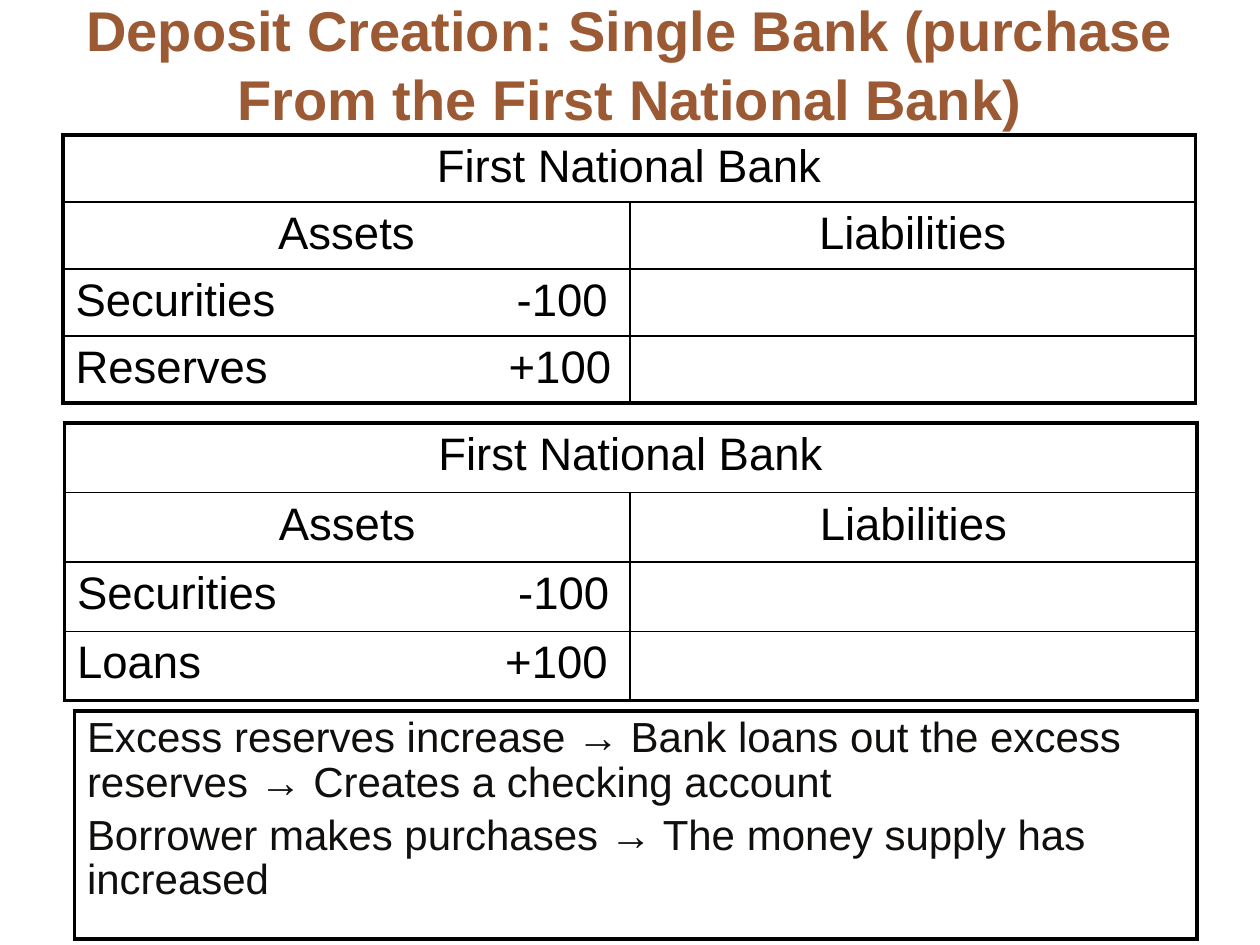
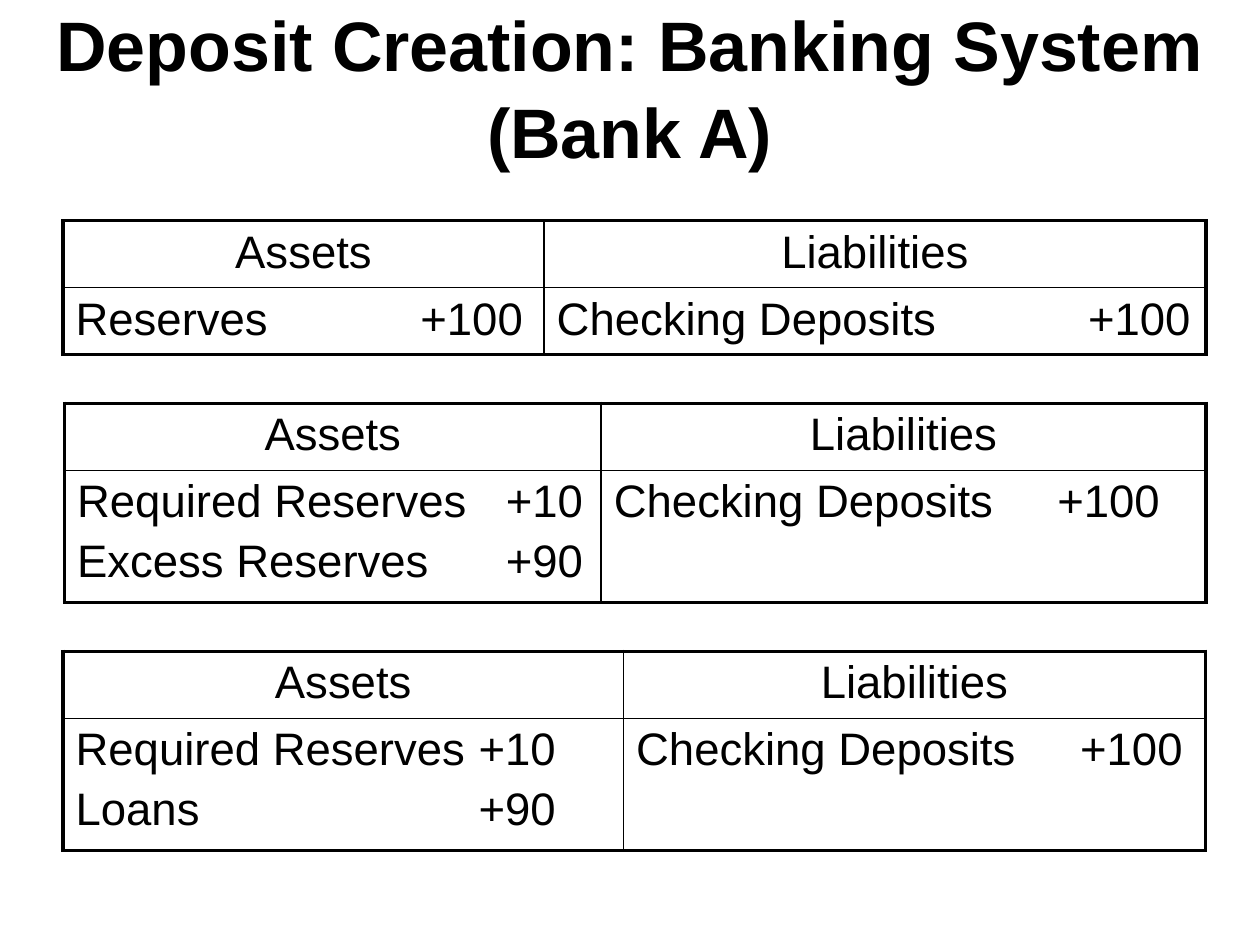
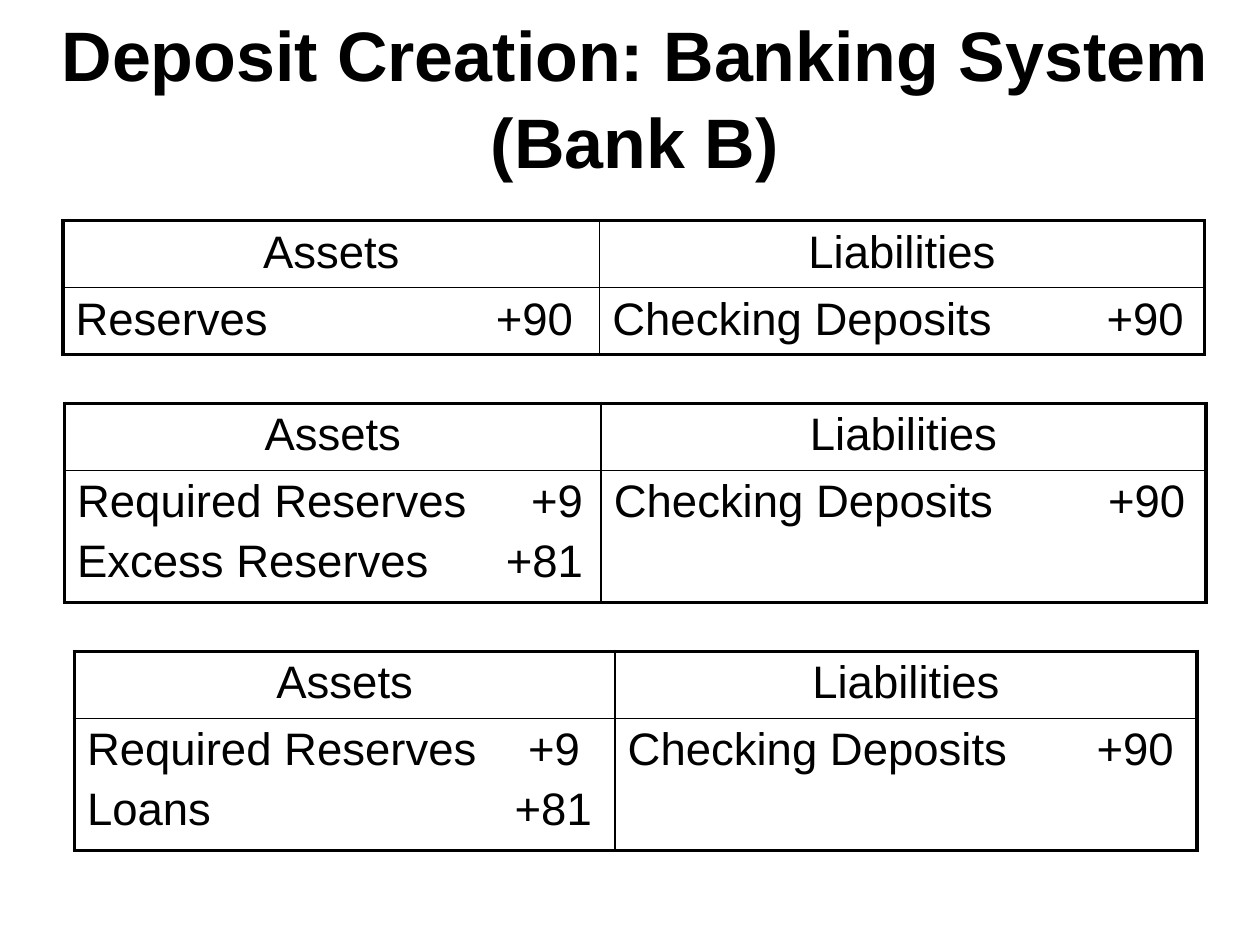
from dataclasses import dataclass

from lxml.etree import SubElement as Sub
from pptx import Presentation
from pptx.dml.color import RGBColor as Rgb
from pptx.enum.text import MSO_ANCHOR as Anchor, MSO_AUTO_SIZE as Fit, PP_ALIGN as Align
from pptx.oxml.ns import qn
from pptx.util import Cm, Pt


@dataclass(frozen=True)
class Theme:
    """Colours, type sizes and line widths of the deck."""
    face: str = "Arial"
    ink: str = "000000"
    note: str = "100F0D"
    rust: str = "9B5934"
    small: int = 32
    large: int = 40
    entry: int = 26
    body: int = 24
    thick: float = 2.25
    thin: float = 1


@dataclass(frozen=True)
class Box:
    """Left, top, column widths and row heights in centimetres."""
    x: float
    y: float
    cols: tuple
    rows: tuple


@dataclass(frozen=True)
class Entry:
    """A label, its amount and the tab stop that ends the amount."""
    label: str
    sum: str
    tab: float


THEME = Theme()
SHORT, TALL = (1.35, 1.35), (1.35, 2.67)
HEADS = ("Assets", "Liabilities")


def add_run(para, text, size, ink, bold=False):
    """Add one formatted run to a paragraph."""
    run = para.add_run()
    run.text = text
    font = run.font
    font.name, font.size, font.bold = THEME.face, Pt(size), bold
    font.color.rgb = Rgb.from_string(ink)


def next_para(frame, index, gap):
    """Return the paragraph at an index, spaced from the one before."""
    if index == 0:
        return frame.paragraphs[0]
    para = frame.add_paragraph()
    para.space_before = Pt(gap)
    return para


def set_tab(para, stop):
    """Give a paragraph one right-aligned tab stop."""
    tabs = Sub(para._p.get_or_add_pPr(), qn("a:tabLst"))
    Sub(tabs, qn("a:tab"), pos=str(Cm(stop)), algn="r")


def put_head(cell, text):
    """Write a centred heading in a cell."""
    para = cell.text_frame.paragraphs[0]
    para.alignment = Align.CENTER
    add_run(para, text, THEME.entry, THEME.ink)


def put_items(cell, items):
    """Write ledger entries in a cell, one to a paragraph."""
    for i, item in enumerate(items):
        para = next_para(cell.text_frame, i, 5.2)
        set_tab(para, item.tab)
        add_run(para, item.label, THEME.entry, THEME.ink)
        add_run(para, "\t" + item.sum, THEME.entry, THEME.ink)


def rule_cell(cell, outer):
    """Draw the four borders of a cell, thick where it meets the frame."""
    props = cell._tc.get_or_add_tcPr()
    for side, edge in zip("LRTB", outer):
        width = Pt(THEME.thick if edge else THEME.thin)
        line = Sub(props, qn(f"a:ln{side}"), w=str(width))
        fill = Sub(line, qn("a:solidFill"))
        Sub(fill, qn("a:srgbClr"), val=THEME.ink)
    cell.fill.background()


def add_grid(slide, box, merge=False):
    """Add a plain ruled table to a box, its top row merged on request."""
    high, wide = len(box.rows), len(box.cols)
    grid = slide.shapes.add_table(high, wide, Cm(box.x), Cm(box.y),
                                  Cm(sum(box.cols)), Cm(sum(box.rows))).table
    grid.first_row = grid.horz_banding = False
    for col, width in zip(grid.columns, box.cols):
        col.width = Cm(width)
    for row, height in zip(grid.rows, box.rows):
        row.height = Cm(height)
    if merge:
        grid.cell(0, 0).merge(grid.cell(0, wide - 1))
    for r in range(high):
        for c in range(wide):
            cell = grid.cell(r, c)
            if not cell.is_spanned:
                span = cell.span_width if cell.is_merge_origin else 1
                rule_cell(cell, (c == 0, c + span == wide, r == 0, r == high - 1))
    return grid


def add_ledger(slide, box, lines, bank=None):
    """Add a balance sheet whose lines hold the entries of each side."""
    grid = add_grid(slide, box, merge=bool(bank))
    top = 1 if bank else 0
    if bank:
        put_head(grid.cell(0, 0), bank)
    for c, head in enumerate(HEADS):
        put_head(grid.cell(top, c), head)
    for r, line in enumerate(lines, top + 1):
        for c, items in enumerate(line):
            put_items(grid.cell(r, c), items)


def add_note(slide, box, lines):
    """Add a framed note with one paragraph for each line."""
    frame = add_grid(slide, box).cell(0, 0).text_frame
    for i, line in enumerate(lines):
        para = next_para(frame, i, 4.8)
        para.line_spacing = 0.95
        add_run(para, line, THEME.body, THEME.note)


def add_slide(deck, text, place, size, ink):
    """Add a slide with a bold centred title at the given place."""
    slide = deck.slides.add_slide(deck.slide_layouts[5])
    title = slide.shapes.title
    title.left, title.top, title.width, title.height = map(Cm, place)
    frame = title.text_frame
    frame.auto_size, frame.vertical_anchor = Fit.NONE, Anchor.MIDDLE
    para = frame.paragraphs[0]
    para.alignment, para.line_spacing = Align.CENTER, 1.04
    add_run(para, text, size, ink, True)
    return slide


def add_single(deck):
    """Build the slide on a single bank."""
    slide = add_slide(deck, "Deposit Creation: Single Bank (purchase From the First National Bank)",
                      (1.27, 0, 22.86, 2.51), THEME.small, THEME.rust)
    sold = Entry("Securities", "-100", 10.73)
    sheets = (
        (Box(1.27, 2.72, (11.43, 11.4), (1.35,) * 4), Entry("Reserves", "+100", 10.8)),
        (Box(1.3, 8.53, (11.4, 11.43), (1.4,) * 4), Entry("Loans", "+100", 10.7)),
    )
    for box, gain in sheets:
        add_ledger(slide, box, [[[sold]], [[gain]]], "First National Bank")
    add_note(slide, Box(1.5, 14.33, (22.63,), (4.6,)), (
        "Excess reserves increase → Bank loans out the excess reserves → Creates a checking account",
        "Borrower makes purchases → The money supply has increased",
    ))


def add_system(deck, name, place, sheets):
    """Build a slide on one bank of the system from its balance sheets."""
    slide = add_slide(deck, f"Deposit Creation: Banking System ({name})",
                      place, THEME.large, THEME.ink)
    for box, assets, total, stop in sheets:
        debts = [Entry("Checking Deposits", total, stop)]
        add_ledger(slide, box, [[assets, debts]])


def main():
    """Build and save the deck."""
    deck = Presentation()
    deck.slide_width, deck.slide_height = Cm(25.4), Cm(19.05)
    add_single(deck)
    even = (10.82, 12.19)
    add_system(deck, "Bank A", (0.69, 0.13, 24, 3.18), (
        (Box(1.27, 4.45, (9.7, 13.34), SHORT),
         [Entry("Reserves", "+100", 9.02)], "+100", 12.78),
        (Box(1.3, 8.13, even, TALL),
         [Entry("Required Reserves", "+10", 10.2), Entry("Excess Reserves", "+90", 10.2)],
         "+100", 11.01),
        (Box(1.27, 13.13, (11.3, 11.73), TALL),
         [Entry("Required Reserves", "+10", 9.68), Entry("Loans", "+90", 9.68)],
         "+100", 11.02),
    ))
    add_system(deck, "Bank B", (0.69, 0.33, 24.21, 3.18), (
        (Box(1.27, 4.45, even, SHORT),
         [Entry("Reserves", "+90", 10.03)], "+90", 11.52),
        (Box(1.3, 8.13, even, TALL),
         [Entry("Required Reserves", "+9", 10.2), Entry("Excess Reserves", "+81", 10.2)],
         "+90", 11.52),
        (Box(1.5, 13.13, (10.9, 11.73), TALL),
         [Entry("Required Reserves", "+9", 9.94), Entry("Loans", "+81", 10.18)],
         "+90", 11.01),
    ))
    deck.save("out.pptx")


if __name__ == "__main__":
    main()
